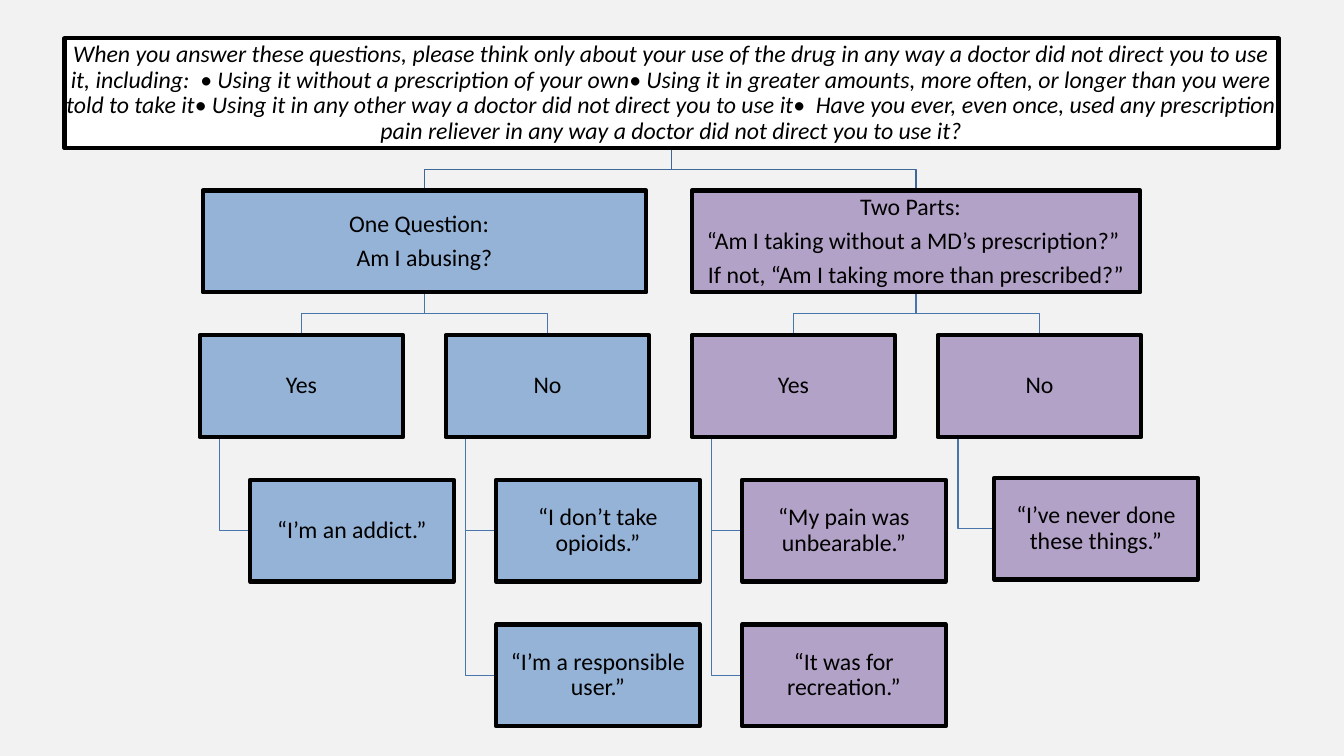
from collections import namedtuple
from dataclasses import dataclass
from pptx import Presentation
from pptx.dml.color import RGBColor
from pptx.enum import shapes, text
from pptx.util import Inches, Pt


@dataclass(frozen=True)
class Theme:
    back: str = "F2F2F2"
    white: str = "FFFFFF"
    blue: str = "95B3D7"
    plum: str = "B3A2C7"
    ink: str = "000000"
    trunk: str = "3F6797"
    twig: str = "4875AC"
    font: str = "Calibri"
    size: int = 17
    edge: int = 3
    wire: int = 1
    gap: int = 6


THEME = Theme()
Box = namedtuple("Box", "left top width height")
CARD = (2.02, 1.01)
STEP = 2.44
ROW = 1.435
INDENT = 0.5
HANG = 0.2

INTRO = (
    "When you answer these questions, please think only about your use of the drug "
    "in any way a doctor did not direct you to use it, including:  "
    "• Using it without a prescription of your own"
    "• Using it in greater amounts, more often, or longer than you were told to take it"
    "• Using it in any other way a doctor did not direct you to use it"
    "•  Have you ever, even once, used any prescription pain reliever "
    "in any way a doctor did not direct you to use it?"
)


def color(code):
    return RGBColor.from_string(code)


def middle(box):
    return box.left + box.width / 2


def bottom(box):
    return box.top + box.height


def add_wire(slide, points, tint):
    spots = [(Inches(x), Inches(y)) for x, y in points]
    maker = slide.shapes.build_freeform(*spots[0])
    maker.add_line_segments(spots[1:], close=False)
    wire = maker.convert_to_shape()
    wire.shadow.inherit = False
    wire.fill.background()
    wire.line.color.rgb = color(tint)
    wire.line.width = Pt(THEME.wire)


def add_fork(slide, box, kid, tint):
    half = (bottom(box) + kid.top) / 2
    start, end = middle(box), middle(kid)
    points = [(start, bottom(box)), (start, half), (end, half), (end, kid.top)]
    add_wire(slide, points, tint)


def add_hook(slide, box, leaf):
    x, y = box.left + HANG, leaf.top + leaf.height / 2
    add_wire(slide, [(x, bottom(box)), (x, y), (leaf.left, y)], THEME.twig)


def add_card(slide, box, lines, fill, italic=False):
    card = slide.shapes.add_shape(
        shapes.MSO_SHAPE.RECTANGLE, *(Inches(n) for n in box))
    card.shadow.inherit = False
    card.fill.solid()
    card.fill.fore_color.rgb = color(fill)
    card.line.color.rgb = color(THEME.ink)
    card.line.width = Pt(THEME.edge)
    frame = card.text_frame
    frame.word_wrap = True
    frame.vertical_anchor = text.MSO_ANCHOR.MIDDLE
    frame.margin_left = frame.margin_right = Inches(0.01)
    frame.margin_top = frame.margin_bottom = Inches(0.01)
    frame.text = "\n".join(lines)
    for para in frame.paragraphs:
        para.alignment = text.PP_ALIGN.CENTER
        para.line_spacing = 0.9
        para.space_after = Pt(THEME.gap)
        para.font.name = THEME.font
        para.font.size = Pt(THEME.size)
        para.font.italic = italic
        para.font.color.rgb = color(THEME.ink)


def add_answer(slide, box, word, quotes, fill, nudge):
    right, down = nudge
    leaves = [
        Box(box.left + INDENT + right, box.top + ROW * row + down, *CARD)
        for row in range(1, len(quotes) + 1)
    ]
    for leaf in leaves:
        add_hook(slide, box, leaf)
    add_card(slide, box, [word], fill)
    for leaf, quote in zip(leaves, quotes):
        add_card(slide, leaf, [quote], fill)


def add_branch(slide, box, left, lines, answers, fill):
    kids = [Box(left + STEP * col, box.top + ROW, *CARD)
            for col in range(len(answers))]
    for kid in kids:
        add_fork(slide, box, kid, THEME.twig)
    add_card(slide, box, lines, fill)
    for kid, (word, quotes, nudge) in zip(kids, answers):
        add_answer(slide, kid, word, quotes, fill, nudge)


def add_tree(slide, box):
    top = box.top + 1.51
    one = Box(box.left + 1.37, top, 4.4, CARD[1])
    two = Box(box.left + 6.22, top, 4.45, CARD[1])
    for head in (one, two):
        add_fork(slide, box, head, THEME.trunk)
    add_card(slide, box, [INTRO], THEME.white, italic=True)
    first = box.left + 1.34
    still = (0, 0)
    add_branch(
        slide, one, first,
        ["One Question:  ", "Am I abusing?"],
        [("Yes", ["“I’m an addict.”"], still),
         ("No", ["“I don’t take opioids.”", "“I’m a responsible user.”"], still)],
        THEME.blue)
    add_branch(
        slide, two, first + 2 * STEP,
        ["Two Parts:  ",
         "“Am I taking without a MD’s prescription?” ",
         "If not, “Am I taking more than prescribed?”"],
        [("Yes", ["“My pain was unbearable.”", "“It was for recreation.”"], still),
         ("No", ["“I’ve never done these things.”"], (0.06, -0.02))],
        THEME.plum)


def main():
    deck = Presentation()
    deck.slide_width, deck.slide_height = Inches(13.33), Inches(7.5)
    slide = deck.slides.add_slide(deck.slide_layouts[6])
    slide.background.fill.solid()
    slide.background.fill.fore_color.rgb = color(THEME.back)
    add_tree(slide, Box(0.64, 0.38, 12.04, 1.09))
    deck.save("out.pptx")


if __name__ == "__main__":
    main()
